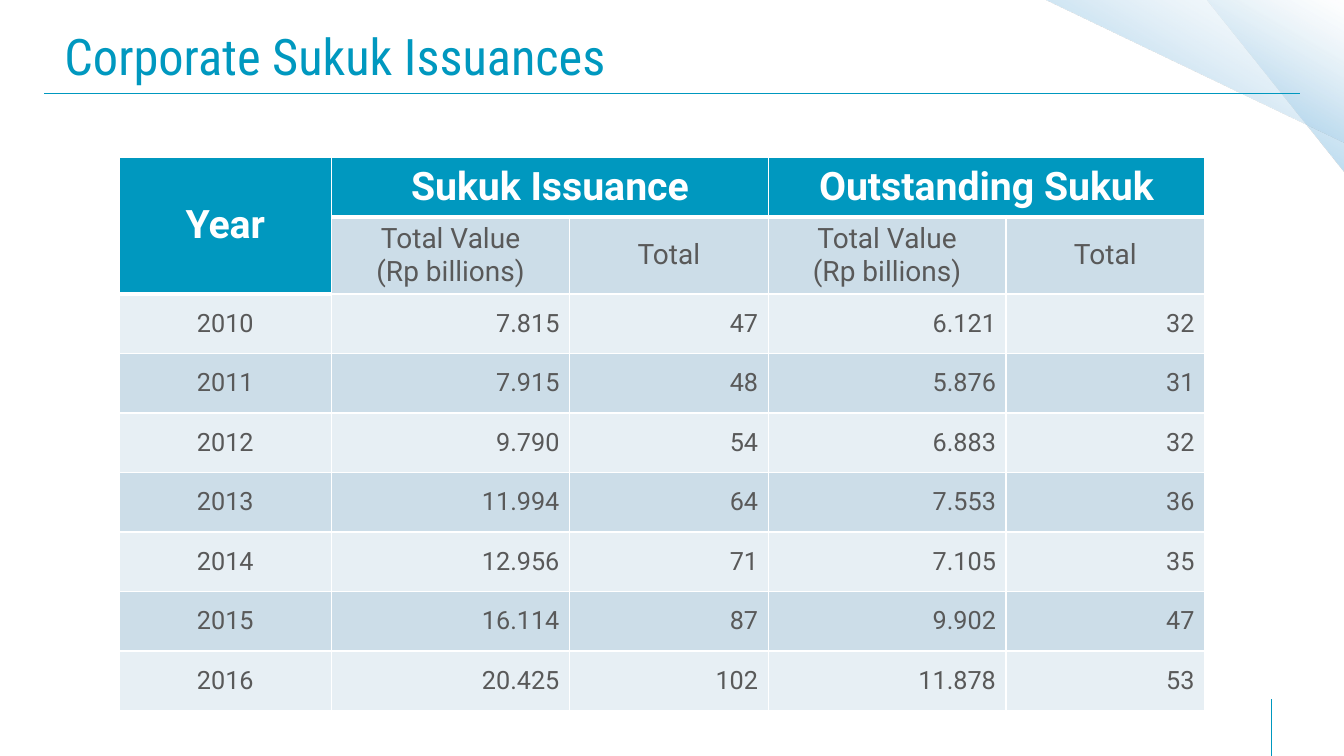
import dataclasses

import lxml.etree
import pptx
import pptx.dml.color
import pptx.enum.shapes
import pptx.enum.text
import pptx.oxml
import pptx.oxml.ns
import pptx.util

# The slide is a grid of 100 columns by 100 rows.
WIDE, HIGH = pptx.util.Inches(13.33), pptx.util.Inches(7.5)
COLORS = {
    "teal": "0098BF",
    "white": "FFFFFF",
    "ink": "595959",
    "dark": "CCDDE8",
    "light": "E7EFF4",
}
FADE = [(0, "8FC8E8", 100), (50, "A4CEE9", 44), (100, "DEEDF6", 0)]
ALIGN = pptx.enum.text.PP_ALIGN
MIDDLE = pptx.enum.text.MSO_ANCHOR.MIDDLE


@dataclasses.dataclass
class Box:
    left: float
    top: float
    width: float
    height: float

    def place(self) -> tuple:
        return across(self.left), down(self.top), across(self.width), down(self.height)


@dataclasses.dataclass
class Rule:
    left: float
    top: float
    right: float
    base: float


@dataclasses.dataclass
class Style:
    size: int
    color: str
    font: str = "Roboto"
    bold: bool = False
    align: int = ALIGN.CENTER


@dataclasses.dataclass
class Head:
    row: int
    col: int
    text: str
    rows: int = 1
    cols: int = 1


TITLE = Style(36, "teal", "Roboto Condensed", align=ALIGN.LEFT)
GROUP = Style(28, "white", bold=True)
LABEL = Style(20, "ink")
YEAR = Style(18, "ink")
VALUE = Style(18, "ink", align=ALIGN.RIGHT)

SHARDS = [Box(89.8, 0, 10.2, 22.8), Box(77.72, 0, 22.43, 18.93)]
RULES = [Rule(3.3, 12.4, 96.7, 12.4), Rule(94.6, 100, 94.6, 92.4)]
TITLE_BOX = Box(3.45, 1.87, 91.6, 10.93)
TABLE_BOX = Box(8.85, 20.8, 80.79, 70.8)
COLS = [15.83, 17.7, 14.78, 17.7, 14.78]
ROW = 7.87

HEADS = [
    Head(0, 0, "Year", rows=2),
    Head(0, 1, "Sukuk Issuance", cols=2),
    Head(0, 3, "Outstanding Sukuk", cols=2),
]
LABELS = ["Total Value\n(Rp billions)", "Total"] * 2
DATA = [
    ("2010", "7.815", "47", "6.121", "32"),
    ("2011", "7.915", "48", "5.876", "31"),
    ("2012", "9.790", "54", "6.883", "32"),
    ("2013", "11.994", "64", "7.553", "36"),
    ("2014", "12.956", "71", "7.105", "35"),
    ("2015", "16.114", "87", "9.902", "47"),
    ("2016", "20.425", "102", "11.878", "53"),
]


def across(cols: float) -> int:
    return round(WIDE * cols / 100)


def down(rows: float) -> int:
    return round(HIGH * rows / 100)


def tint(name: str) -> pptx.dml.color.RGBColor:
    return pptx.dml.color.RGBColor.from_string(COLORS[name])


def write(frame, text: str, style: Style) -> None:
    frame.text = text
    for para in frame.paragraphs:
        para.alignment = style.align
        para.font.name = style.font
        para.font.size = pptx.util.Pt(style.size)
        para.font.bold = style.bold
        para.font.color.rgb = tint(style.color)


def draw_shard(slide, box: Box) -> None:
    """Add a corner triangle that fades to clear."""
    kind = pptx.enum.shapes.MSO_SHAPE.RIGHT_TRIANGLE
    shard = slide.shapes.add_shape(kind, *box.place())
    shard.rotation = 180
    shard.shadow.inherit = False
    shard.line.fill.background()
    stops = "".join(
        f'<a:gs pos="{pos * 1000}"><a:srgbClr val="{color}">'
        f'<a:alpha val="{alpha * 1000}"/></a:srgbClr></a:gs>'
        for pos, color, alpha in FADE
    )
    fill = pptx.oxml.parse_xml(
        f'<a:gradFill {pptx.oxml.ns.nsdecls("a")} rotWithShape="1">'
        f'<a:gsLst>{stops}</a:gsLst><a:lin ang="7200000" scaled="0"/></a:gradFill>'
    )
    shard.element.spPr.find(pptx.oxml.ns.qn("a:prstGeom")).addnext(fill)


def draw_rule(slide, rule: Rule) -> None:
    line = slide.shapes.add_connector(
        pptx.enum.shapes.MSO_CONNECTOR.STRAIGHT,
        across(rule.left), down(rule.top), across(rule.right), down(rule.base),
    )
    line.line.color.rgb = tint("teal")
    line.line.width = pptx.util.Pt(1)
    lxml.etree.SubElement(line.element.spPr, pptx.oxml.ns.qn("a:effectLst"))


def draw_title(slide, text: str) -> None:
    frame = slide.shapes.add_textbox(*TITLE_BOX.place()).text_frame
    frame.word_wrap = True
    frame.vertical_anchor = MIDDLE
    frame.margin_left = frame.margin_right = pptx.util.Inches(0.18)
    frame.margin_top = frame.margin_bottom = pptx.util.Inches(0.09)
    write(frame, text, TITLE)


def paint(cell, fill: str, top: int = 1, base: int = 1) -> None:
    """Set the fill and the white borders, in points, of a cell."""
    props = cell._tc.get_or_add_tcPr()
    for side, width in (("L", 1), ("R", 1), ("T", top), ("B", base)):
        props.append(pptx.oxml.parse_xml(
            f'<a:ln{side} {pptx.oxml.ns.nsdecls("a")} w="{pptx.util.Pt(width)}">'
            f'<a:solidFill><a:srgbClr val="{COLORS["white"]}"/></a:solidFill></a:ln{side}>'
        ))
    cell.fill.solid()
    cell.fill.fore_color.rgb = tint(fill)
    cell.vertical_anchor = MIDDLE


def draw_table(slide) -> None:
    count = len(DATA) + 2
    table = slide.shapes.add_table(count, len(COLS), *TABLE_BOX.place()).table
    table.first_row = table.horz_banding = False
    for col, width in zip(table.columns, COLS):
        col.width = across(width)
    for row in table.rows:
        row.height = down(ROW)

    for row in range(count):
        for col in range(len(COLS)):
            cell = table.cell(row, col)
            if row == 0 or (row == 1 and col == 0):
                paint(cell, "teal", base=3)
            else:
                thick = row == 1 or (row == 2 and col == 0)
                paint(cell, "dark" if row % 2 else "light", top=3 if thick else 1)

    for head in HEADS:
        cell = table.cell(head.row, head.col)
        cell.merge(table.cell(head.row + head.rows - 1, head.col + head.cols - 1))
        write(cell.text_frame, head.text, GROUP)
    for col, label in enumerate(LABELS, 1):
        write(table.cell(1, col).text_frame, label, LABEL)
    for row, line in enumerate(DATA, 2):
        for col, text in enumerate(line):
            write(table.cell(row, col).text_frame, text, VALUE if col else YEAR)


def main() -> None:
    deck = pptx.Presentation()
    deck.slide_width, deck.slide_height = WIDE, HIGH
    slide = deck.slides.add_slide(deck.slide_layouts[6])
    for box in SHARDS:
        draw_shard(slide, box)
    for rule in RULES:
        draw_rule(slide, rule)
    draw_title(slide, "Corporate Sukuk Issuances")
    draw_table(slide)
    deck.save("out.pptx")


if __name__ == "__main__":
    main()
